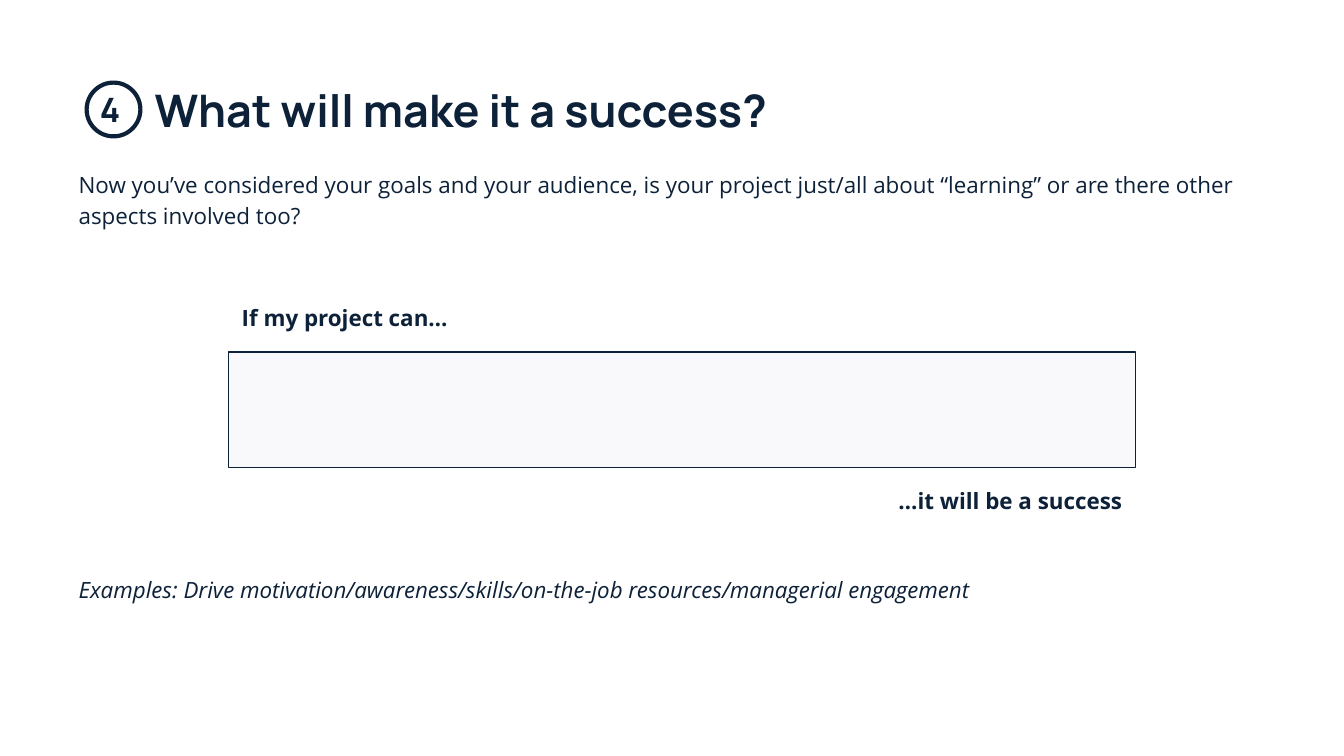
from pptx import Presentation
from pptx.dml.color import RGBColor
from pptx.enum.shapes import MSO_SHAPE
from pptx.enum.text import MSO_ANCHOR, MSO_AUTO_SIZE, PP_ALIGN
from pptx.oxml import parse_xml
from pptx.oxml.ns import nsdecls
from pptx.util import Inches, Pt

SLIDE_WIDTH = Inches(10)
SLIDE_HEIGHT = SLIDE_WIDTH * 9 // 16
CELL = SLIDE_WIDTH // 100
NAVY = "0D2139"
PALE = "F9F9FB"
HEADING_FONT = "Manrope"
BODY_FONT = "Open Sans"
CARD_LEFT, CARD_WIDTH = 17, 67.5
LABEL_WIDTH = 32.8
PARAGRAPH_GAP = 183.5


def color(value):
    return RGBColor.from_string(value)


def cells(*area):
    return [round(length * CELL) for length in area]


def place(shape, area):
    shape.left, shape.top, shape.width, shape.height = cells(*area)


def prepare_frame(shape):
    frame = shape.text_frame
    frame.word_wrap = True
    frame.auto_size = MSO_AUTO_SIZE.NONE
    frame.vertical_anchor = MSO_ANCHOR.TOP
    frame.margin_left = frame.margin_right = Inches(0.1)
    frame.margin_top = frame.margin_bottom = Inches(0.1)
    return frame


def remove_bullet(paragraph):
    properties = paragraph._p.get_or_add_pPr()
    properties.set("marL", "0")
    properties.set("indent", "0")
    properties.append(parse_xml(f"<a:buNone {nsdecls('a')}/>"))


def write(paragraph, text, size=12, font=BODY_FONT, bold=False, italic=False,
          align=PP_ALIGN.LEFT, spacing=1.0, before=0):
    paragraph.alignment = align
    paragraph.line_spacing = spacing
    paragraph.space_before = Pt(before)
    run = paragraph.add_run()
    run.text = text
    run.font.size = Pt(size)
    run.font.name = font
    run.font.bold = bold
    run.font.italic = italic
    run.font.color.rgb = color(NAVY)


def fill_title(slide, text, area):
    title = slide.shapes.title
    place(title, area)
    write(prepare_frame(title).paragraphs[0], text, size=24,
          font=HEADING_FONT, bold=True)


def fill_body(slide, question, examples, area):
    body = slide.placeholders[1]
    place(body, area)
    frame = prepare_frame(body)
    first, last = frame.paragraphs[0], frame.add_paragraph()
    for paragraph in (first, last):
        remove_bullet(paragraph)
    write(first, question, spacing=1.15)
    write(last, examples, italic=True, spacing=1.15, before=PARAGRAPH_GAP)


def add_outline(slide, kind, area, line_width, fill=None):
    shape = slide.shapes.add_shape(kind, *cells(*area))
    shape.shadow.inherit = False
    if fill:
        shape.fill.solid()
        shape.fill.fore_color.rgb = color(fill)
    else:
        shape.fill.background()
    shape.line.color.rgb = color(NAVY)
    shape.line.width = Pt(line_width)


def add_label(slide, text, area, **style):
    box = slide.shapes.add_textbox(*cells(*area))
    write(prepare_frame(box).paragraphs[0], text, bold=True, **style)


def main():
    presentation = Presentation()
    presentation.slide_width = SLIDE_WIDTH
    presentation.slide_height = SLIDE_HEIGHT
    slide = presentation.slides.add_slide(presentation.slide_layouts[1])

    fill_title(slide, "What will make it a success?", (10.5, 5.15, 61.1, 6.1))
    fill_body(
        slide,
        "Now you’ve considered your goals and your audience, is your project "
        "just/all about “learning” or are there other aspects involved too?",
        "Examples: Drive motivation/awareness/skills/on-the-job "
        "resources/managerial engagement",
        (4.85, 11.45, 90.7, 34.4))

    add_outline(slide, MSO_SHAPE.OVAL, (6.45, 6.15, 4, 4), 2.25)
    add_label(slide, "4", (6.45, 5.6, 3.1, 4), size=18, font=HEADING_FONT,
              align=PP_ALIGN.CENTER)

    add_outline(slide, MSO_SHAPE.RECTANGLE,
                (CARD_LEFT, 26.2, CARD_WIDTH, 8.6), 0.75, fill=PALE)
    add_label(slide, "If my project can…", (CARD_LEFT, 21.6, LABEL_WIDTH, 4))
    add_label(slide, "…it will be a success",
              (CARD_LEFT + CARD_WIDTH - LABEL_WIDTH, 35.25, LABEL_WIDTH, 4),
              align=PP_ALIGN.RIGHT)

    presentation.save("out.pptx")


if __name__ == "__main__":
    main()
